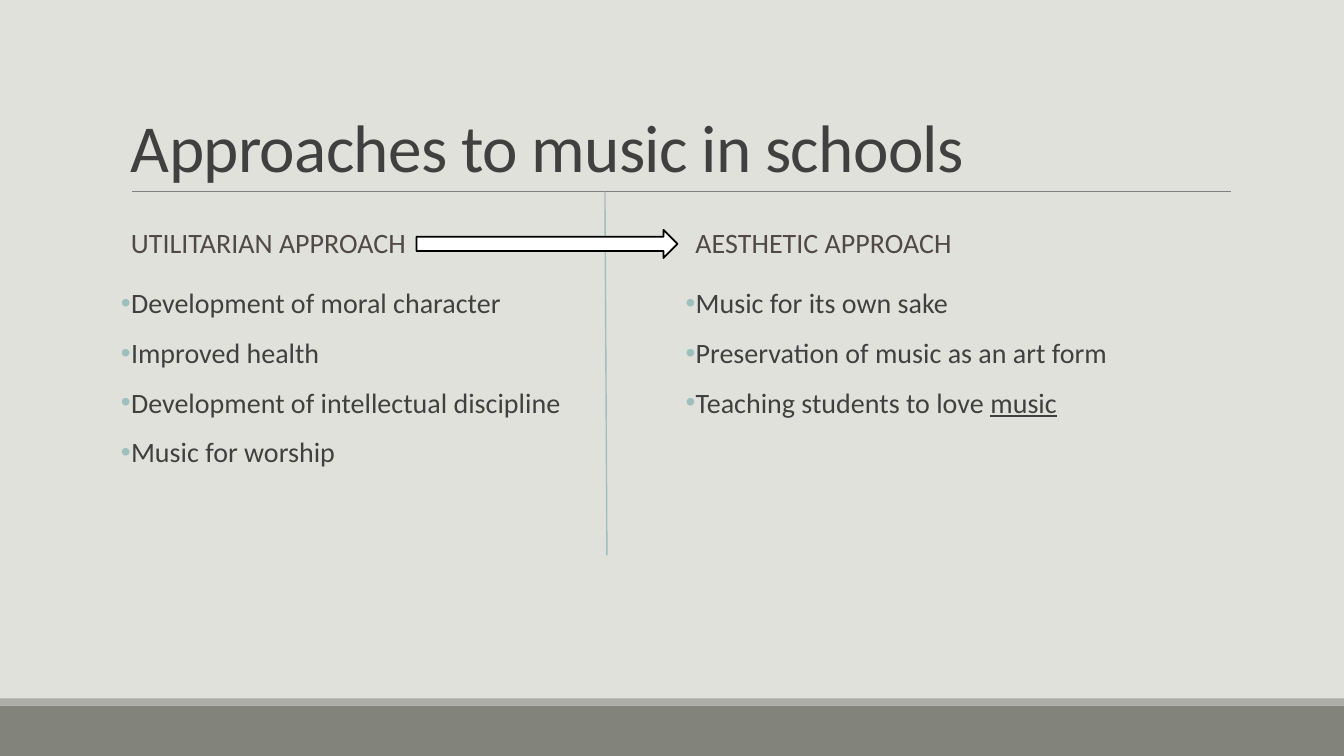
"""Build a slide that compares two approaches to music in schools."""
from dataclasses import dataclass

import pptx
import pptx.dml.color
import pptx.enum.shapes
import pptx.enum.text
import pptx.oxml.ns
import pptx.presentation
import pptx.shapes.autoshape
import pptx.slide
import pptx.text.text
import pptx.util
from lxml import etree

Inches = pptx.util.Inches
Pt = pptx.util.Pt
Anchor = pptx.enum.text.MSO_ANCHOR
Preset = pptx.enum.shapes.MSO_SHAPE
qn = pptx.oxml.ns.qn

FONT = "Calibri"
BULLET_FONT = "Arial"
TEXT = "404040"
HEADING = "514949"
ACCENT = "9DBFBE"
COLUMN_WIDTH = 5.4
HANGING = 0.1


@dataclass(frozen=True)
class Box:
    left: float
    top: float
    width: float
    height: float


@dataclass(frozen=True)
class Block:
    box: Box
    preset: pptx.enum.shapes.MSO_SHAPE
    fill: str
    outline: str = ""
    outline_width: float = 0


@dataclass(frozen=True)
class Rule:
    start: tuple[float, float]
    end: tuple[float, float]
    color: str
    width: float


@dataclass(frozen=True)
class Approach:
    left: float
    heading: str
    points: tuple[str, ...]
    underlined_ending: str = ""


BANDS = (
    Block(Box(0, 7, 13.33, 0.5), Preset.RECTANGLE, "82847C"),
    Block(Box(0, 6.93, 13.33, 0.07), Preset.RECTANGLE, "ACADA8"),
)
SHIFT_ARROW = Block(Box(4.13, 2.28, 2.59, 0.28), Preset.RIGHT_ARROW, "FFFFFF", "000000", 1.25)
TITLE_RULE = Rule((1.31, 1.9), (12.21, 1.9), "808080", 0.5)
DIVIDER = Rule((6, 1.9), (6.02, 5.51), ACCENT, 1)
APPROACHES = (
    Approach(1.2, "UTILITARIAN APPROACH", (
        "Development of moral character",
        "Improved health",
        "Development of intellectual discipline",
        "Music for worship",
    )),
    Approach(6.8, "AESTHETIC APPROACH", (
        "Music for its own sake",
        "Preservation of music as an art form",
        "Teaching students to love ",
    ), "music"),
)


def rgb(color: str) -> pptx.dml.color.RGBColor:
    return pptx.dml.color.RGBColor.from_string(color)


def add_block(slide: pptx.slide.Slide, block: Block) -> None:
    box = block.box
    shape = slide.shapes.add_shape(
        block.preset, Inches(box.left), Inches(box.top), Inches(box.width), Inches(box.height))
    shape.shadow.inherit = False
    shape.fill.solid()
    shape.fill.fore_color.rgb = rgb(block.fill)
    if block.outline:
        shape.line.color.rgb = rgb(block.outline)
        shape.line.width = Pt(block.outline_width)
    else:
        shape.line.fill.background()


def add_rule(slide: pptx.slide.Slide, rule: Rule) -> None:
    line = slide.shapes.add_connector(
        pptx.enum.shapes.MSO_CONNECTOR.STRAIGHT,
        *(Inches(value) for value in rule.start + rule.end))
    line.line.color.rgb = rgb(rule.color)
    line.line.width = Pt(rule.width)
    etree.SubElement(line._element.spPr, qn("a:effectLst"))


def add_text(slide: pptx.slide.Slide, box: Box, lines: tuple[str, ...],
             anchor: pptx.enum.text.MSO_ANCHOR, side_inset: float = 0.1) -> pptx.text.text.TextFrame:
    frame = slide.shapes.add_textbox(
        Inches(box.left), Inches(box.top), Inches(box.width), Inches(box.height)).text_frame
    frame.word_wrap = True
    frame.vertical_anchor = anchor
    frame.margin_left = frame.margin_right = Inches(side_inset)
    frame.text = "\n".join(lines)
    return frame


def style_text(frame: pptx.text.text.TextFrame, size: float, color: str, line_spacing: float,
               before: float = 0, after: float = 0) -> None:
    for paragraph in frame.paragraphs:
        paragraph.line_spacing = line_spacing
        paragraph.space_before = Pt(before)
        paragraph.space_after = Pt(after)
        for run in paragraph.runs:
            run.font.name = FONT
            run.font.size = Pt(size)
            run.font.color.rgb = rgb(color)


def add_bullet(paragraph: pptx.text.text._Paragraph) -> None:
    properties = paragraph._p.get_or_add_pPr()
    properties.set("marL", str(Inches(HANGING)))
    properties.set("indent", str(-Inches(HANGING)))
    bullet_color = etree.SubElement(properties, qn("a:buClr"))
    etree.SubElement(bullet_color, qn("a:srgbClr"), val=ACCENT)
    etree.SubElement(properties, qn("a:buFont"), typeface=BULLET_FONT)
    etree.SubElement(properties, qn("a:buChar"), char="•")


def add_title(slide: pptx.slide.Slide, title: str) -> None:
    frame = add_text(slide, Box(1.2, 0.31, 11, 1.59), (title,), Anchor.BOTTOM)
    style_text(frame, 48, TEXT, 0.85)
    frame.paragraphs[0].runs[0]._r.get_or_add_rPr().set("spc", "-50")


def add_approach(slide: pptx.slide.Slide, approach: Approach) -> None:
    heading = add_text(slide, Box(approach.left, 2.02, COLUMN_WIDTH, 0.81),
                       (approach.heading,), Anchor.MIDDLE)
    style_text(heading, 20, HEADING, 0.9, 12, 2)
    points = add_text(slide, Box(approach.left, 2.82, COLUMN_WIDTH, 3.69),
                      approach.points, Anchor.TOP, 0)
    if approach.underlined_ending:
        ending = points.paragraphs[-1].add_run()
        ending.text = approach.underlined_ending
        ending.font.underline = True
    style_text(points, 20, TEXT, 0.9, 12, 2)
    for paragraph in points.paragraphs:
        add_bullet(paragraph)


def main() -> None:
    presentation = pptx.Presentation()
    presentation.slide_width = Inches(13.33)
    presentation.slide_height = Inches(7.5)
    slide = presentation.slides.add_slide(presentation.slide_layouts[6])
    slide.background.fill.solid()
    slide.background.fill.fore_color.rgb = rgb("E1E1DB")
    for band in BANDS:
        add_block(slide, band)
    add_rule(slide, TITLE_RULE)
    add_title(slide, "Approaches to music in schools")
    for approach in APPROACHES:
        add_approach(slide, approach)
    add_rule(slide, DIVIDER)
    add_block(slide, SHIFT_ARROW)
    presentation.save("out.pptx")


if __name__ == "__main__":
    main()
